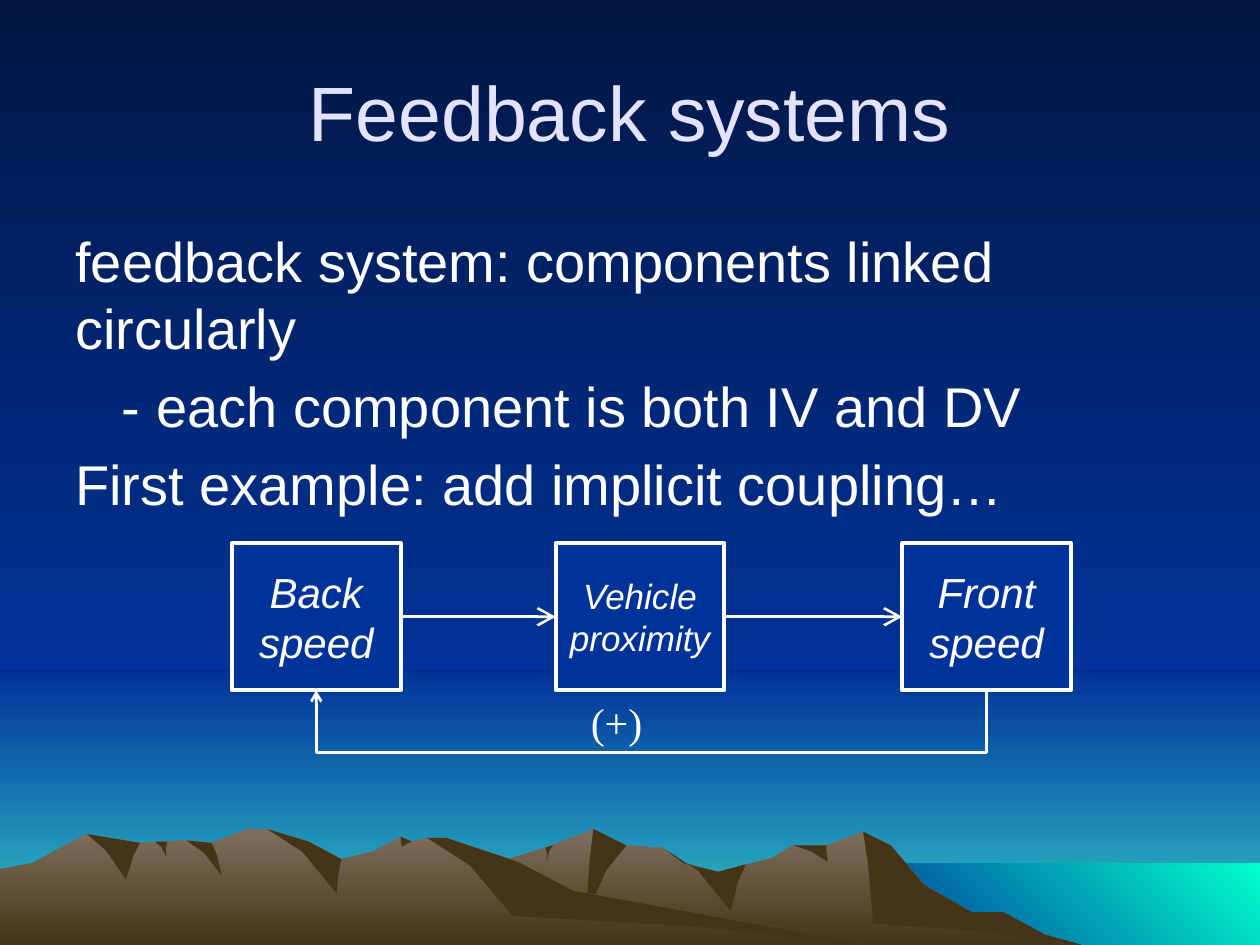
from dataclasses import dataclass
from itertools import pairwise

from pptx import Presentation
from pptx.dml.color import RGBColor
from pptx.enum.shapes import MSO_CONNECTOR, MSO_SHAPE
from pptx.enum.text import MSO_ANCHOR, PP_ALIGN
from pptx.oxml.xmlchemy import OxmlElement
from pptx.util import Inches, Pt

RECTANGLE = MSO_SHAPE.RECTANGLE
STRAIGHT = MSO_CONNECTOR.STRAIGHT
MIDDLE, TOP = MSO_ANCHOR.MIDDLE, MSO_ANCHOR.TOP
CENTER, LEFT = PP_ALIGN.CENTER, PP_ALIGN.LEFT
LEFT_SIDE, RIGHT_SIDE = 1, 3
DOWN, UP_RIGHT = 270, 45

COLUMNS, ROWS = 1000, 750
CELL = Inches(10) // COLUMNS
MARGIN = 50
CONTENT_WIDTH = COLUMNS - 2 * MARGIN
HORIZON, SEA_LEFT, SEA_TOP = 533, 683, 685
BOX_TOP, BOX_WIDTH, BOX_HEIGHT = 431, 134, 117
BOX_BOTTOM = BOX_TOP + BOX_HEIGHT
LOOP_DEPTH = 49
SUBPOINT_INDENT = 37
SHADOW_BEND = 0.35


@dataclass(frozen=True)
class Theme:
    night: str = "001642"
    blue: str = "003399"
    dawn: str = "33CCCC"
    sea: str = "00FFCC"
    rock: str = "463416"
    peak: str = "7D705E"
    title: str = "E3E3FF"
    white: str = "FFFFFF"
    sans: str = "Arial"
    serif: str = "Times New Roman"
    title_size: int = 44
    body_size: int = 32
    box_size: int = 24
    small_size: int = 20
    box_line: float = 2.25
    arrow_line: float = 1.5


@dataclass(frozen=True)
class Shadow:
    left: int
    right: int
    tip: tuple


@dataclass(frozen=True)
class MountainRange:
    ridge: tuple
    shadows: tuple

    def height_at(self, column):
        for (left, start), (right, end) in pairwise(self.ridge):
            if left <= column <= right:
                return start + (end - start) * (column - left) / (right - left)

    def outline(self):
        return [*self.ridge, (self.ridge[-1][0], ROWS), (self.ridge[0][0], ROWS)]

    def shadow_outline(self, shadow):
        start, end = [(column, self.height_at(column)) for column in (shadow.left, shadow.right)]
        crest = [point for point in self.ridge if shadow.left < point[0] < shadow.right]
        return [start, *crest, end, bend(end, shadow.tip), shadow.tip, bend(start, shadow.tip)]


THEME = Theme()

NEAR_RANGE = MountainRange(
    ridge=((258, 750), (327, 709), (394, 685), (438, 671), (471, 658), (497, 671), (526, 673),
           (542, 685), (570, 692), (613, 681), (629, 671), (656, 671), (685, 660), (707, 671),
           (734, 703), (771, 724), (796, 724), (829, 742), (858, 750)),
    shadows=(Shadow(433, 439, (434, 684)), Shadow(471, 497, (465, 727)),
             Shadow(528, 592, (580, 723)), Shadow(630, 656, (657, 684)),
             Shadow(685, 858, (693, 733))))
FAR_RANGE = MountainRange(
    ridge=((0, 690), (26, 685), (68, 662), (111, 669), (148, 667), (168, 669), (196, 658),
           (212, 658), (245, 668), (271, 682), (296, 676), (318, 664), (327, 668), (339, 665),
           (354, 665), (411, 684), (455, 707), (690, 750)),
    shadows=(Shadow(69, 111, (100, 698)), Shadow(123, 133, (132, 680)),
             Shadow(148, 168, (176, 695)), Shadow(212, 271, (267, 709)),
             Shadow(318, 330, (319, 672)), Shadow(339, 690, (407, 727))))


def bend(edge, tip):
    upper, lower = sorted((edge[1], tip[1]))
    return (edge[0] + tip[0]) / 2, upper + SHADOW_BEND * (lower - upper)


def rgb(code):
    return RGBColor.from_string(code)


def cells(*lengths):
    return [length * CELL for length in lengths]


def apply_format(target, values):
    for name, value in values.items():
        setattr(target, name, value)


def paint(fill, colors, angle=DOWN):
    if len(colors) == 1:
        fill.solid()
        fill.fore_color.rgb = rgb(colors[0])
        return
    fill.gradient()
    fill.gradient_angle = angle
    for stop, color in zip(fill.gradient_stops, colors):
        stop.color.rgb = rgb(color)


def draw_line(line, width):
    line.color.rgb = rgb(THEME.white)
    line.width = Pt(width)


def add_arrowhead(line, size="med"):
    tail = OxmlElement("a:tailEnd")
    for name, value in {"type": "arrow", "w": size, "len": size}.items():
        tail.set(name, value)
    line._get_or_add_ln().append(tail)


def font_format(size, color=THEME.white, name=THEME.sans, italic=False):
    return {"size": Pt(size), "name": name, "italic": italic}, color


def write_lines(frame, lines, font, align=LEFT, space=0):
    values, color = font
    for index, text in enumerate(lines):
        paragraph = frame.add_paragraph() if index else frame.paragraphs[0]
        apply_format(paragraph, {"alignment": align, "space_before": Pt(space)})
        run = paragraph.add_run()
        run.text = text
        apply_format(run.font, values)
        run.font.color.rgb = rgb(color)


def add_text(slide, place, lines, font, align=LEFT, anchor=TOP, wrap=True, space=0):
    frame = slide.shapes.add_textbox(*cells(*place)).text_frame
    apply_format(frame, {"word_wrap": wrap, "vertical_anchor": anchor})
    write_lines(frame, lines, font, align, space)
    return frame


def add_panel(slide, place, colors, angle=DOWN):
    shape = slide.shapes.add_shape(RECTANGLE, *cells(*place))
    shape.shadow.inherit = False
    paint(shape.fill, colors, angle)
    shape.line.fill.background()
    return shape


def add_outline(slide, points, closed=True):
    builder = slide.shapes.build_freeform(*points[0], scale=CELL)
    builder.add_line_segments(points[1:], close=closed)
    shape = builder.convert_to_shape()
    shape.shadow.inherit = False
    return shape


def add_rock(slide, points, colors):
    shape = add_outline(slide, points)
    paint(shape.fill, colors)
    shape.line.fill.background()


def add_mountains(slide, mountains):
    add_rock(slide, mountains.outline(), [THEME.peak, THEME.rock])
    for shadow in mountains.shadows:
        add_rock(slide, mountains.shadow_outline(shadow), [THEME.rock])


def add_landscape(slide):
    night_sky = [THEME.night, THEME.blue]
    paint(slide.background.fill, night_sky)
    add_panel(slide, (0, HORIZON, COLUMNS, ROWS - HORIZON), [THEME.blue, THEME.dawn])
    add_panel(slide, (0, 0, COLUMNS, HORIZON), night_sky)
    add_panel(slide, (SEA_LEFT, SEA_TOP, COLUMNS - SEA_LEFT, ROWS - SEA_TOP),
              [THEME.blue, THEME.sea], UP_RIGHT)
    for mountains in (NEAR_RANGE, FAR_RANGE):
        add_mountains(slide, mountains)


def add_box(slide, left, lines, size):
    shape = add_panel(slide, (left, BOX_TOP, BOX_WIDTH, BOX_HEIGHT), [THEME.blue])
    draw_line(shape.line, THEME.box_line)
    apply_format(shape.text_frame, {"word_wrap": False, "vertical_anchor": MIDDLE})
    write_lines(shape.text_frame, lines, font_format(size, italic=True), CENTER)
    return shape


def add_arrow(slide, source, target):
    connector = slide.shapes.add_connector(STRAIGHT, 0, 0, 0, 0)
    connector.begin_connect(source, RIGHT_SIDE)
    connector.end_connect(target, LEFT_SIDE)
    draw_line(connector.line, THEME.arrow_line)
    add_arrowhead(connector.line, "lg")
    connector._element.spPr.append(OxmlElement("a:effectLst"))


def add_feedback_loop(slide, source, target):
    start, end = [(box.left + box.width // 2) // CELL for box in (source, target)]
    low = BOX_BOTTOM + LOOP_DEPTH
    corners = [(start, BOX_BOTTOM), (start, low), (end, low), (end, BOX_BOTTOM)]
    loop = add_outline(slide, corners, closed=False)
    loop.fill.background()
    draw_line(loop.line, THEME.arrow_line)
    add_arrowhead(loop.line)


def add_diagram(slide):
    boxes = [add_box(slide, *content) for content in (
        (184, ["Back", "speed"], THEME.box_size),
        (441, ["Vehicle", "proximity"], THEME.small_size),
        (716, ["Front", "speed"], THEME.box_size))]
    for source, target in pairwise(boxes):
        add_arrow(slide, source, target)
    add_feedback_loop(slide, boxes[-1], boxes[0])
    add_text(slide, (459, BOX_BOTTOM, 61, 50), ["(+)"],
             font_format(THEME.box_size, name=THEME.serif), wrap=False)


def main():
    presentation = Presentation()
    apply_format(presentation, {"slide_width": COLUMNS * CELL, "slide_height": ROWS * CELL})
    slide = presentation.slides.add_slide(presentation.slide_layouts[6])
    add_landscape(slide)
    add_text(slide, (MARGIN, 25, CONTENT_WIDTH, 125), ["Feedback systems"],
             font_format(THEME.title_size, THEME.title), CENTER, MIDDLE)
    body = add_text(slide, (MARGIN, 175, CONTENT_WIDTH, 492), [
        "feedback system: components linked circularly",
        "- each component is both IV and DV",
        "First example: add implicit coupling…"], font_format(THEME.body_size), space=6)
    body.paragraphs[1]._p.get_or_add_pPr().set("marL", str(SUBPOINT_INDENT * CELL))
    add_diagram(slide)
    presentation.save("out.pptx")


if __name__ == "__main__":
    main()
